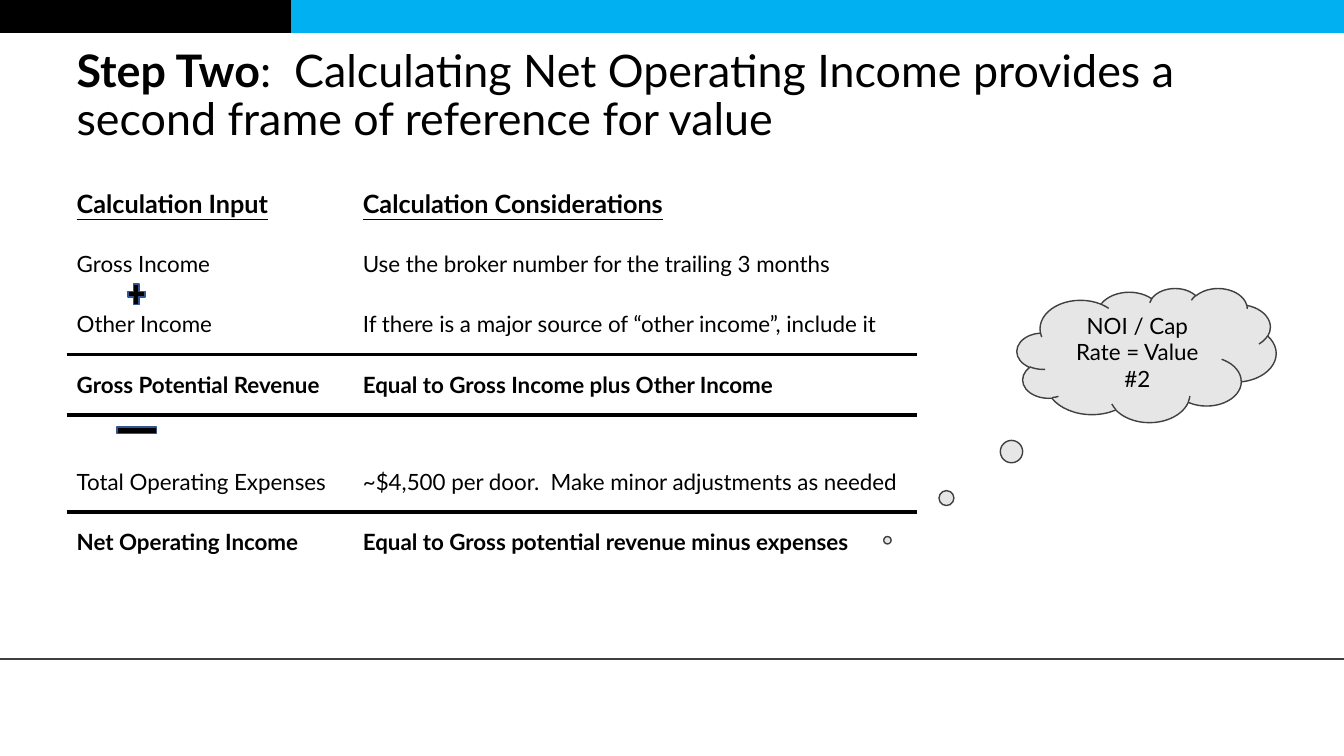
from dataclasses import dataclass

from lxml.etree import SubElement
from pptx import Presentation
from pptx.dml.color import RGBColor
from pptx.enum.shapes import MSO_CONNECTOR, MSO_SHAPE
from pptx.enum.text import MSO_ANCHOR, PP_ALIGN
from pptx.oxml import parse_xml
from pptx.oxml.ns import nsdecls, qn
from pptx.util import Cm, Pt

COLORS = {
    "black": "000000",
    "blue": "00B0F0",
    "gray": "404040",
    "cloud": "E7E6E6",
    "outline": "325491",
}
FONT = "Lato"
SLIDE_WIDTH, SLIDE_HEIGHT = 33.87, 19.05
COLUMN_WIDTHS = (7.21, 14.22)
ROW_HEIGHT, GAP_HEIGHT = 1.52, 0.93
NO_STYLE = "{2D5ABB26-0587-4C30-8999-92F81FD0307C}"


@dataclass
class Block:
    kind: MSO_SHAPE
    left: float
    top: float
    width: float
    height: float
    fill: str
    line: str = ""


@dataclass
class Row:
    label: str = ""
    consideration: str = ""
    size: int = 16
    bold: bool = False
    underline: bool = False
    rule: str = ""


BAND_SPLIT = 7.34
BLOCKS = [
    Block(MSO_SHAPE.RECTANGLE, 0, 0, BAND_SPLIT, 0.83, "black"),
    Block(MSO_SHAPE.RECTANGLE, BAND_SPLIT, 0, SLIDE_WIDTH - BAND_SPLIT, 0.83, "blue"),
]
OPERATORS = [
    Block(MSO_SHAPE.MATH_PLUS, 3.15, 7.06, 0.58, 0.71, "black", "outline"),
    Block(MSO_SHAPE.MATH_MINUS, 2.77, 10.49, 1.35, 0.71, "black", "outline"),
]
CLOUD = Block(MSO_SHAPE.CLOUD_CALLOUT, 25.63, 7.26, 6.53, 3.38, "cloud", "gray")

ROWS = [
    Row("Calculation Input", "Calculation Considerations", 18, True, True),
    Row("Gross Income", "Use the broker number for the trailing 3 months"),
    Row("Other Income", "If there is a major source of “other income”, include it", rule="lnB"),
    Row("Gross Potential Revenue", "Equal to Gross Income plus Other Income", bold=True, rule="lnT"),
    Row(),
    Row("Total Operating Expenses", "~$4,500 per door.  Make minor adjustments as needed", rule="lnB"),
    Row("Net Operating Income", "Equal to Gross potential revenue minus expenses", bold=True, rule="lnT"),
]


def color(name: str) -> RGBColor:
    return RGBColor.from_string(COLORS[name])


def add_run(paragraph, text: str, *, size: int = 16, bold: bool = False,
            underline: bool = False) -> None:
    run = paragraph.add_run()
    run.text = text
    run.font.name = FONT
    run.font.size = Pt(size)
    run.font.bold = bold
    run.font.underline = underline
    run.font.color.rgb = color("black")


def add_block(slide, block: Block):
    shape = slide.shapes.add_shape(
        block.kind, Cm(block.left), Cm(block.top), Cm(block.width), Cm(block.height))
    shape.shadow.inherit = False
    shape.fill.solid()
    shape.fill.fore_color.rgb = color(block.fill)
    if block.line:
        shape.line.color.rgb = color(block.line)
        shape.line.width = Pt(1)
    else:
        shape.line.fill.background()
    return shape


def add_divider(slide, top: float) -> None:
    connector = slide.shapes.add_connector(
        MSO_CONNECTOR.STRAIGHT, Cm(0), Cm(top), Cm(SLIDE_WIDTH), Cm(top))
    connector.line.color.rgb = color("gray")
    connector.line.width = Pt(1.75)
    SubElement(connector._element.spPr, qn("a:effectLst"))


def add_title(slide) -> None:
    box = slide.shapes.add_textbox(Cm(1.68), Cm(1.3), Cm(30.48), Cm(2.29))
    frame = box.text_frame
    frame.word_wrap = True
    frame.vertical_anchor = MSO_ANCHOR.MIDDLE
    paragraph = frame.paragraphs[0]
    paragraph.line_spacing = 0.9
    add_run(paragraph, "Step Two", size=32, bold=True)
    add_run(paragraph, ":  Calculating Net Operating Income provides a "
                       "second frame of reference for value", size=32)


def add_rule(cell, side: str) -> None:
    border = parse_xml(
        f'<a:{side} {nsdecls("a")} w="{Pt(3)}"><a:solidFill>'
        f'<a:srgbClr val="{COLORS["black"]}"/></a:solidFill></a:{side}>')
    cell._tc.get_or_add_tcPr().insert(0, border)


def add_calculation_table(slide) -> None:
    heights = [ROW_HEIGHT if row.label else GAP_HEIGHT for row in ROWS]
    table = slide.shapes.add_table(
        len(ROWS), len(COLUMN_WIDTHS), Cm(1.68), Cm(4.37),
        Cm(sum(COLUMN_WIDTHS)), Cm(sum(heights))).table
    table.first_row = False
    table.horz_banding = False
    table._tbl.tblPr.find(qn("a:tableStyleId")).text = NO_STYLE
    for column, width in zip(table.columns, COLUMN_WIDTHS):
        column.width = Cm(width)
    for row_index, (row, height) in enumerate(zip(ROWS, heights)):
        table.rows[row_index].height = Cm(height)
        for column_index, text in enumerate((row.label, row.consideration)):
            cell = table.cell(row_index, column_index)
            cell.fill.background()
            cell.vertical_anchor = MSO_ANCHOR.MIDDLE
            cell.margin_top = cell.margin_bottom = Cm(0)
            if text:
                add_run(cell.text_frame.paragraphs[0], text, size=row.size,
                        bold=row.bold, underline=row.underline)
            if row.rule:
                add_rule(cell, row.rule)


def add_cloud(slide) -> None:
    shape = add_block(slide, CLOUD)
    shape.adjustments[0] = -1.0
    shape.adjustments[1] = 1.38
    frame = shape.text_frame
    frame.word_wrap = True
    frame.vertical_anchor = MSO_ANCHOR.MIDDLE
    paragraph = frame.paragraphs[0]
    paragraph.alignment = PP_ALIGN.CENTER
    add_run(paragraph, "NOI / Cap Rate = Value #2")


def main() -> None:
    presentation = Presentation()
    presentation.slide_width = Cm(SLIDE_WIDTH)
    presentation.slide_height = Cm(SLIDE_HEIGHT)
    slide = presentation.slides.add_slide(presentation.slide_layouts[6])

    # Frame of the slide
    for block in BLOCKS:
        add_block(slide, block)
    add_divider(slide, 16.61)

    # Title and calculation
    add_title(slide)
    add_calculation_table(slide)

    # Callout and operator signs
    add_cloud(slide)
    for operator in OPERATORS:
        add_block(slide, operator)

    presentation.save("out.pptx")


if __name__ == "__main__":
    main()
